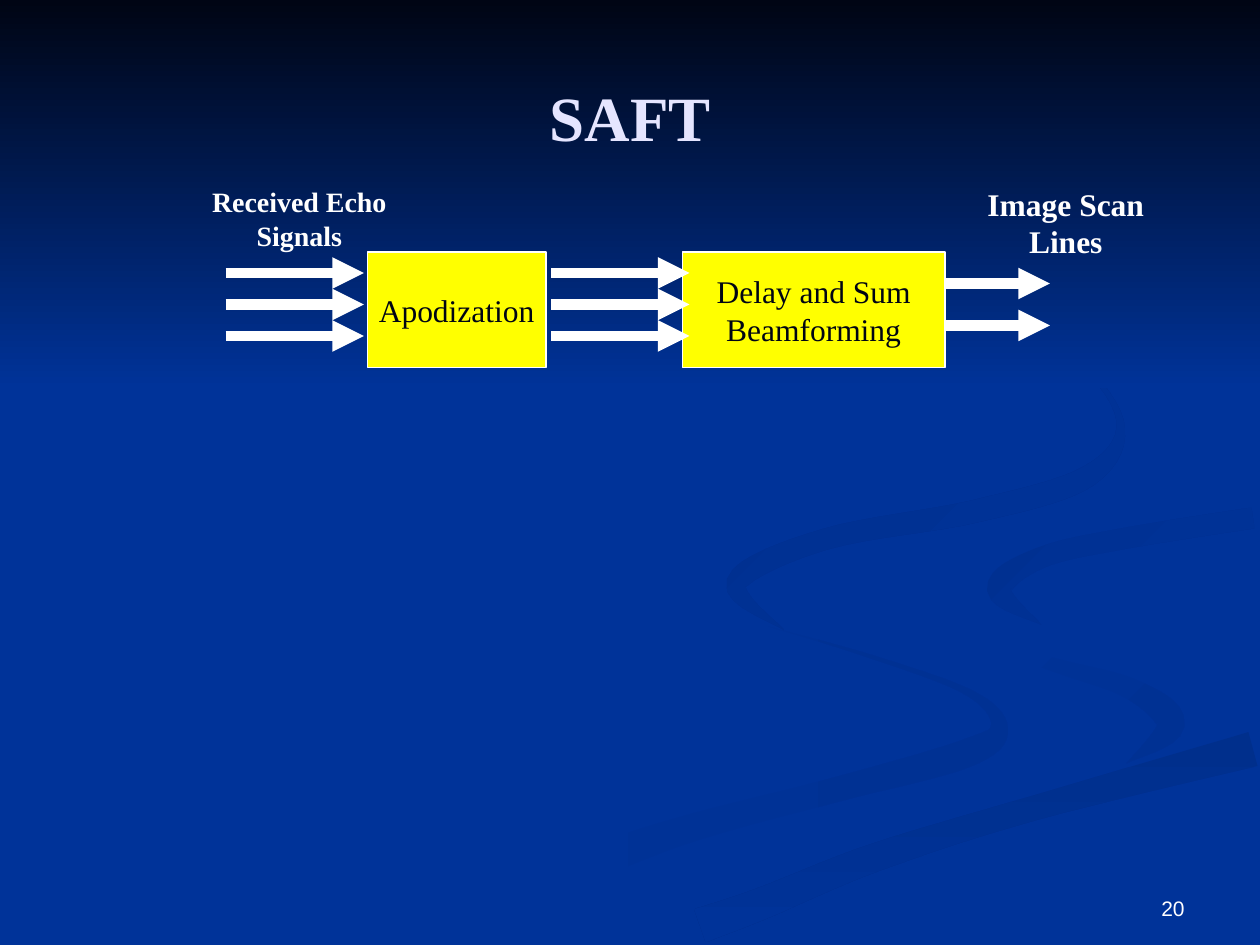
from math import atan2, cos, sin

from lxml import etree
from pptx import Presentation
from pptx.dml.color import RGBColor
from pptx.enum.shapes import MSO_CONNECTOR, MSO_SHAPE
from pptx.enum.text import MSO_ANCHOR, PP_ALIGN
from pptx.oxml.ns import qn
from pptx.util import Pt

LINE, RECT = MSO_CONNECTOR.STRAIGHT, MSO_SHAPE.RECTANGLE
TOP, MIDDLE, BOTTOM = MSO_ANCHOR.TOP, MSO_ANCHOR.MIDDLE, MSO_ANCHOR.BOTTOM
CENTER, RIGHT = PP_ALIGN.CENTER, PP_ALIGN.RIGHT
SERIF, SANS = "Times New Roman", "Arial"
BLUE, NIGHT, WHITE, YELLOW, LILAC = "003399", "000514", "FFFFFF", "FFFF00", "E5E5FF"
STEPS = 8


def color(code):
    """Turn a hex string into a colour."""
    return RGBColor.from_string(code)


def shade(shape, first, last, angle):
    """Fill a shape with a clockwise gradient and no outline."""
    shape.shadow.inherit = False
    shape.line.fill.background()
    shape.fill.gradient()
    shape.fill.gradient_angle = -angle % 360
    for stop, code in zip(shape.fill.gradient_stops, (first, last)):
        stop.color.rgb = color(code)


def write(shape, text, size, code, font=SERIF, bold=False, align=CENTER,
          anchor=MIDDLE, wrap=True):
    """Put formatted text into a shape."""
    frame = shape.text_frame
    frame.text = text
    frame.word_wrap = wrap
    frame.vertical_anchor = anchor
    for para in frame.paragraphs:
        para.alignment = align
        for run in para.runs:
            run.font.name, run.font.size, run.font.bold = font, Pt(size), bold
            run.font.color.rgb = color(code)


def spline(a, b, c, d, t):
    """Return the Catmull-Rom value between b and c."""
    return b + t / 2 * (c - a + t * (2 * a - 5 * b + 4 * c - d
                                     + t * (3 * (b - c) + d - a)))


def smooth(knots):
    """Return a dense curve through the knots."""
    ends = [knots[0], *knots, knots[-1]]
    curve = [tuple(spline(*axis, step / STEPS) for axis in zip(*four))
             for four in zip(ends, ends[1:], ends[2:], ends[3:])
             for step in range(STEPS)]
    return curve + [knots[-1]]


def ribbon(slide, knots, first, last, angle):
    """Draw a band along knots of x, y and half width."""
    curve = smooth(knots)
    left, right = [], []
    for prior, (x, y, half), after in zip(curve[:1] + curve, curve, curve[1:] + curve[-1:]):
        turn = atan2(after[1] - prior[1], after[0] - prior[0])
        dx, dy = -half * sin(turn), half * cos(turn)
        left.append((10 * (x + dx), 10 * (y + dy)))
        right.append((10 * (x - dx), 10 * (y - dy)))
    build = slide.shapes.build_freeform(*left[0], scale=Pt(0.1))
    build.add_line_segments(left[1:] + right[::-1], close=True)
    shade(build.convert_to_shape(), first, last, angle)


def swirls(slide):
    """Draw the five faint ribbons at the lower right."""
    lower = [(439, 358, 0), (497, 375, 1), (554, 396, 2), (571, 416, 5), (551, 431, 8),
             (475, 452, 7), (389, 475, 8), (310, 504, 11), (255, 527, 12)]
    hook = [(547, 363, 1), (606, 381, 4), (647, 394, 6), (669, 414, 8), (644, 436, 0)]
    beam = [(716, 428, 10), (590, 462, 7), (500, 490, 8), (436, 516, 9), (400, 529, 10)]
    crest = [(716, 296, 6), (641, 308, 6), (594, 319, 6), (571, 337, 7), (595, 357, 0)]
    upper = [(549, 168, 0), (608, 199, 1), (640, 240, 2), (622, 272, 6),
             (558, 292, 6.5), (472, 308, 6), (421, 333, 6), (448, 360, 0)]
    ribbon(slide, lower, BLUE, "003193", 0)
    ribbon(slide, hook, BLUE, "003193", 45)
    ribbon(slide, beam, "002F8C", BLUE, 90)
    ribbon(slide, crest, "003091", BLUE, 45)
    ribbon(slide, upper, "002F8E", BLUE, 45)


def backdrop(slide, width, height):
    """Draw the blue ground, the swirls and the dark top band."""
    fill = slide.background.fill
    fill.solid()
    fill.fore_color.rgb = color(BLUE)
    swirls(slide)
    band = slide.shapes.add_shape(RECT, 0, 0, Pt(width), Pt(height))
    shade(band, NIGHT, BLUE, 90)


def heading(slide, text, left, top, width, height):
    """Place the title above the backdrop."""
    title = slide.shapes.title
    title.left, title.top = Pt(left), Pt(top)
    title.width, title.height = Pt(width), Pt(height)
    write(title, text, 36, LILAC, bold=True)
    slide.shapes.element.append(title.element)


def stage(slide, text, left, top, width, height):
    """Draw one yellow processing block."""
    box = slide.shapes.add_shape(RECT, Pt(left), Pt(top), Pt(width), Pt(height))
    box.shadow.inherit = False
    box.fill.solid()
    box.fill.fore_color.rgb = color(YELLOW)
    box.line.color.rgb = color(WHITE)
    box.line.width = Pt(0.75)
    write(box, text, 18, NIGHT, wrap=False)


def arrows(slide, left, top, width, count, gap):
    """Draw evenly spaced arrows pointing right."""
    for row in range(count):
        y = Pt(top + row * gap)
        link = slide.shapes.add_connector(LINE, Pt(left), y, Pt(left + width), y)
        link.line.color.rgb = color(WHITE)
        link.line.width = Pt(6)
        props = link.element.spPr
        etree.SubElement(props.find(qn("a:ln")), qn("a:tailEnd"), type="triangle")
        etree.SubElement(props, qn("a:effectLst"))


def label(slide, text, left, top, width, height, size, **style):
    """Add a white text box."""
    box = slide.shapes.add_textbox(Pt(left), Pt(top), Pt(width), Pt(height))
    write(box, text, size, WHITE, **style)


def diagram(slide, left, top):
    """Lay out signals, blocks and scan lines from left to right."""
    row = top + 42
    stage(slide, "Delay and Sum\nBeamforming", left + 282, row, 150, 66)
    stage(slide, "Apodization", left + 102, row, 102, 66)
    for start in (left + 21, left + 207):
        arrows(slide, start, row + 12, 79, 3, 18)
    arrows(slide, left + 432, row + 18, 60, 2, 24)
    label(slide, "Received Echo Signals", left, top, 126, 46, 16, bold=True, anchor=TOP)
    label(slide, "Image Scan Lines", left + 438, top, 126, 51, 18, bold=True, anchor=TOP)


def main():
    """Build the slide and save it."""
    deck = Presentation()
    deck.slide_width, deck.slide_height = Pt(720), Pt(540)
    slide = deck.slides.add_slide(deck.slide_layouts[5])
    backdrop(slide, 720, 222)
    heading(slide, "SAFT", 36, 21.6, 648, 90)
    diagram(slide, 108, 102)
    label(slide, "20", 516, 492, 168, 37.5, 12, font=SANS, align=RIGHT, anchor=BOTTOM)
    deck.save("out.pptx")


if __name__ == "__main__":
    main()
